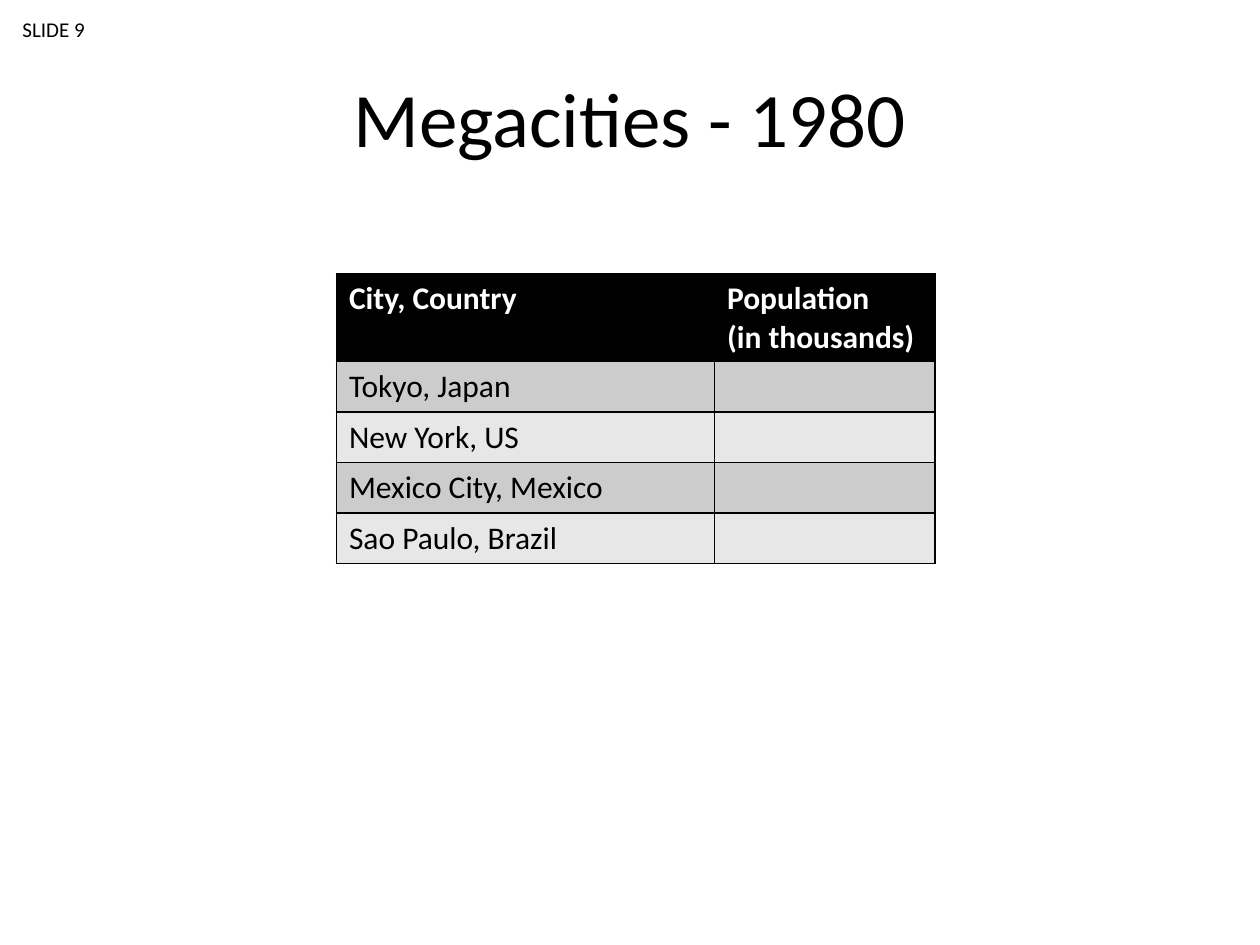
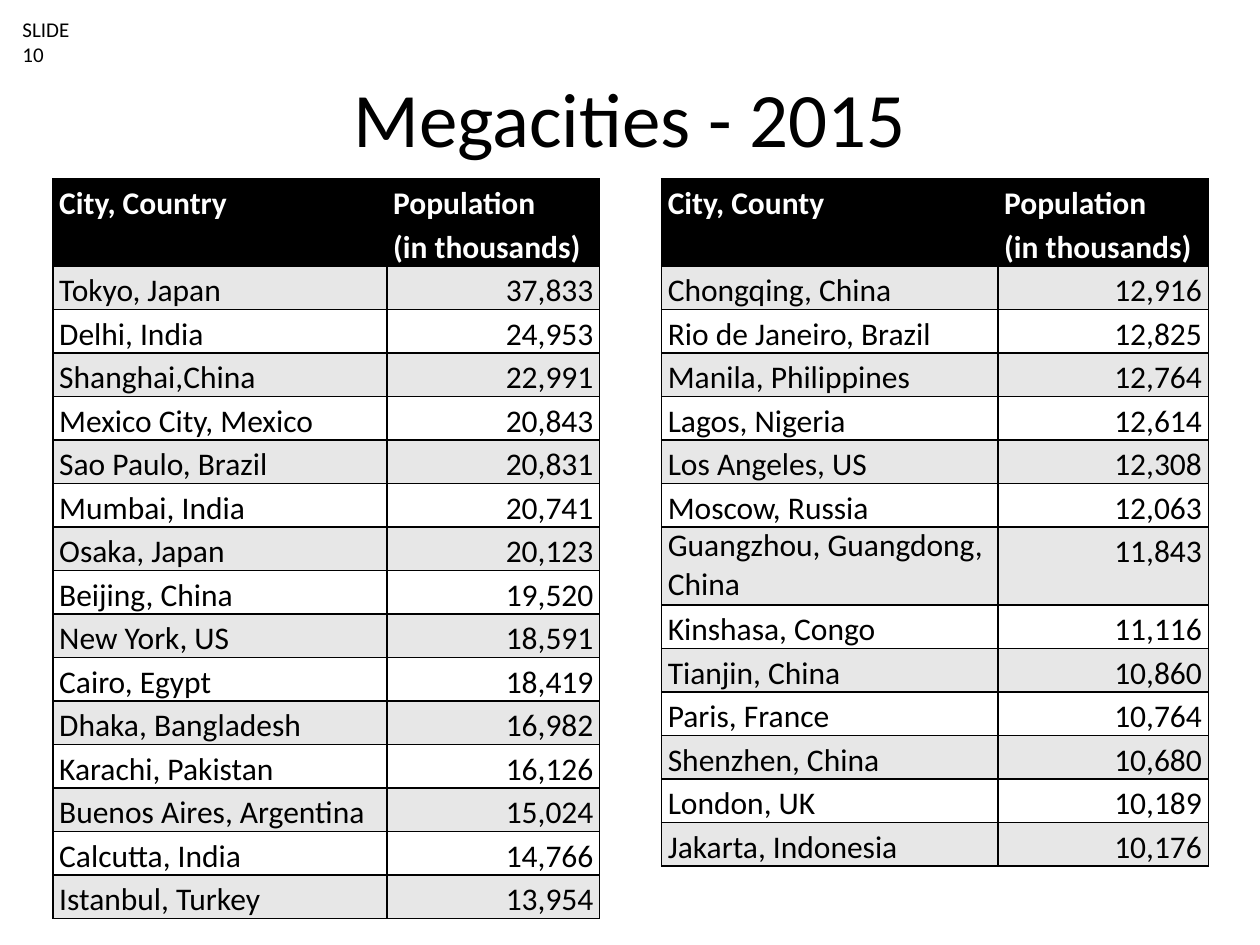
from lxml import etree
from pptx import Presentation
from pptx.dml.color import RGBColor
from pptx.enum.text import MSO_ANCHOR, MSO_AUTO_SIZE, PP_ALIGN
from pptx.oxml.ns import qn
from pptx.util import Inches, Pt

LEFT, CENTER, RIGHT = PP_ALIGN.LEFT, PP_ALIGN.CENTER, PP_ALIGN.RIGHT
MIDDLE = MSO_ANCHOR.MIDDLE
GROW = MSO_AUTO_SIZE.SHAPE_TO_FIT_TEXT

BLACK = RGBColor(0x00, 0x00, 0x00)
WHITE = RGBColor(0xFF, 0xFF, 0xFF)
MID_GRAY = RGBColor(0xCC, 0xCC, 0xCC)
LIGHT_GRAY = RGBColor(0xE7, 0xE7, 0xE7)

FONT = "Calibri"
POPULATION = "Population\n(in thousands)"

CITIES_1980 = [
    ("Tokyo, Japan", ""),
    ("New York, US", ""),
    ("Mexico City, Mexico", ""),
    ("Sao Paulo, Brazil", ""),
]
LARGEST_2015 = [
    ("Tokyo, Japan", "37,833"),
    ("Delhi, India", "24,953"),
    ("Shanghai,China", "22,991"),
    ("Mexico City, Mexico", "20,843"),
    ("Sao Paulo, Brazil", "20,831"),
    ("Mumbai, India", "20,741"),
    ("Osaka, Japan", "20,123"),
    ("Beijing, China", "19,520"),
    ("New York, US", "18,591"),
    ("Cairo, Egypt", "18,419"),
    ("Dhaka, Bangladesh", "16,982"),
    ("Karachi, Pakistan", "16,126"),
    ("Buenos Aires, Argentina", "15,024"),
    ("Calcutta, India", "14,766"),
    ("Istanbul, Turkey", "13,954"),
]
GUANGZHOU = "Guangzhou, Guangdong, China"
OTHERS_2015 = [
    ("Chongqing, China", "12,916"),
    ("Rio de Janeiro, Brazil", "12,825"),
    ("Manila, Philippines", "12,764"),
    ("Lagos, Nigeria", "12,614"),
    ("Los Angeles, US", "12,308"),
    ("Moscow, Russia", "12,063"),
    (GUANGZHOU, "11,843"),
    ("Kinshasa, Congo", "11,116"),
    ("Tianjin, China", "10,860"),
    ("Paris, France", "10,764"),
    ("Shenzhen, China", "10,680"),
    ("London, UK", "10,189"),
    ("Jakarta, Indonesia", "10,176"),
]


def write(frame, text, size=18, color=BLACK, bold=False, align=LEFT, spacing=None):
    """Fill a text frame, one paragraph for each line of the text."""
    for index, line in enumerate(text.split("\n")):
        para = frame.paragraphs[0] if index == 0 else frame.add_paragraph()
        para.alignment = align
        para.line_spacing = spacing
        para.font.size = Pt(size)
        if line:
            span = para.add_run()
            span.text = line
            span.font.name = FONT
            span.font.size = Pt(size)
            span.font.bold = bold
            span.font.color.rgb = color


def add_borders(cell):
    properties = cell._tc.get_or_add_tcPr()
    for side in ("a:lnL", "a:lnR", "a:lnT", "a:lnB"):
        line = etree.SubElement(properties, qn(side), w=str(Pt(1)))
        fill = etree.SubElement(line, qn("a:solidFill"))
        etree.SubElement(fill, qn("a:srgbClr"), val=str(BLACK))


class MegacityDeck:
    def __init__(self):
        self.deck = Presentation()
        self.deck.slide_width = Inches(10)
        self.deck.slide_height = Inches(7.5)
        self.page = None

    def add_page(self, number, year):
        self.page = self.deck.slides.add_slide(self.deck.slide_layouts[6])
        self.add_text(f"Megacities - {year}", 0.5, 0.3, 9, 1.25,
                      anchor=MIDDLE, size=44, align=CENTER)
        label = self.add_text(f"SLIDE {number}", 0.08, 0.08, 0.7, 0.3, size=12)
        label.word_wrap = False
        label.auto_size = GROW

    def add_text(self, text, left, top, width, height, anchor=None, **style):
        box = self.page.shapes.add_textbox(
            Inches(left), Inches(top), Inches(width), Inches(height))
        frame = box.text_frame
        frame.word_wrap = True
        frame.vertical_anchor = anchor
        write(frame, text, **style)
        return frame

    def add_table(self, heading, cities, left, top, height, widths, heights,
                  bands, tight=False, tall_rows=None):
        """Draw a city table; heights holds the header and body row heights."""
        rows = [(heading, POPULATION), *cities]
        shape = self.page.shapes.add_table(
            len(rows), 2, Inches(left), Inches(top), Inches(sum(widths)), Inches(height))
        table = shape.table
        table.horz_banding = False
        for column, width in zip(table.columns, widths):
            column.width = Inches(width)
        for index, texts in enumerate(rows):
            header = index == 0
            tall = (tall_rows or {}).get(texts[0])
            table.rows[index].height = Inches(tall or heights[0 if header else 1])
            for column, text in enumerate(texts):
                cell = table.cell(index, column)
                if tight:
                    cell.margin_left = cell.margin_right = Inches(0.05)
                    cell.margin_top = cell.margin_bottom = 0
                add_borders(cell)
                cell.fill.solid()
                cell.fill.fore_color.rgb = BLACK if header else bands[(index - 1) % 2]
                wraps = tall and column == 0
                write(cell.text_frame, text, bold=header,
                      color=WHITE if header else BLACK,
                      align=RIGHT if column and not header else LEFT,
                      spacing=1.15 if tight and not wraps else None)
        shape.height = Inches(height)


def main():
    slides = MegacityDeck()

    slides.add_page(9, 1980)
    slides.add_table("City, Country", CITIES_1980, 2.67, 2.17, 2.3,
                     widths=(3, 1.75), heights=(0.69, 0.4),
                     bands=(MID_GRAY, LIGHT_GRAY))

    slides.add_page(10, 2015)
    compact = {"bands": (LIGHT_GRAY, WHITE), "tight": True}
    slides.add_table("City, Country", LARGEST_2015, 0.42, 1.42, 5.87,
                     widths=(2.65, 1.69), heights=(0.57, 0.28), **compact)
    slides.add_table("City, County", OTHERS_2015, 5.25, 1.42, 5.45,
                     widths=(2.67, 1.67), heights=(0.66, 0.33),
                     tall_rows={GUANGZHOU: 0.62}, **compact)

    slides.deck.save("out.pptx")


if __name__ == "__main__":
    main()
